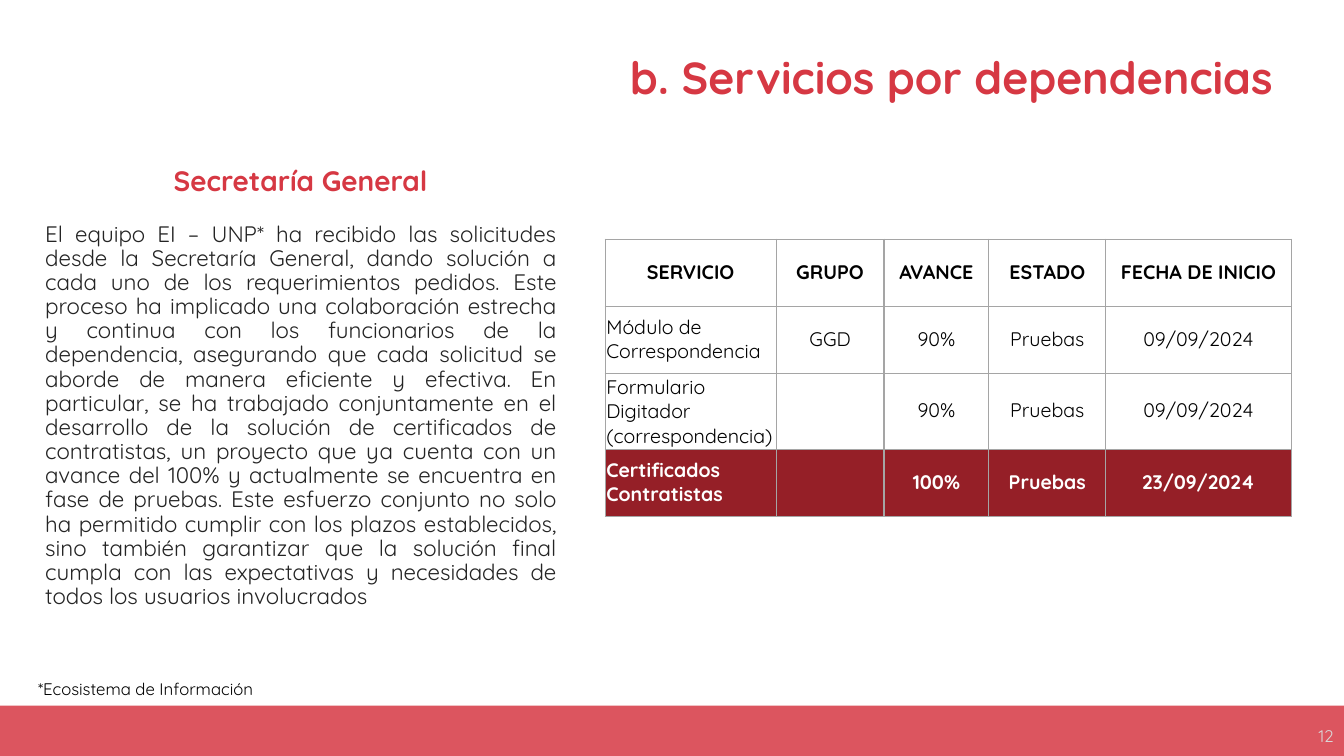
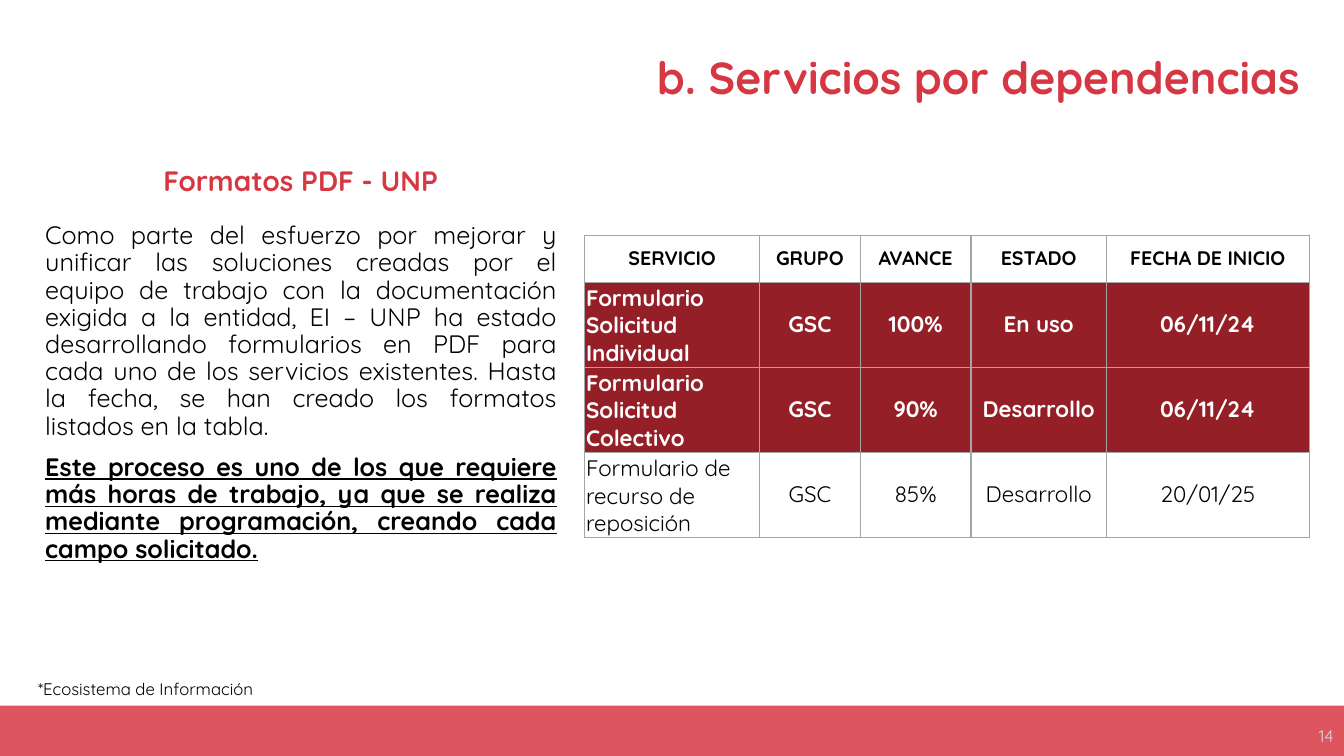
from lxml import etree
from pptx import Presentation
from pptx.dml.color import RGBColor
from pptx.enum.shapes import MSO_SHAPE
from pptx.enum.text import MSO_ANCHOR, PP_ALIGN
from pptx.oxml.ns import qn
from pptx.util import Cm, Pt

FONT = "Quicksand"
RED = "D63843"
DARK_RED = "951F27"
BLACK = "000000"
CHARCOAL = "242424"
WHITE = "FFFFFF"
PALE_GRAY = "D9D9D9"
BORDER_GRAY = "A5A5A5"

SLIDE_WIDTH = 33.87
SLIDE_HEIGHT = 19.05
BAND_TOP = 17.78
HEADINGS = ["SERVICIO", "GRUPO", "AVANCE", "ESTADO", "FECHA DE INICIO"]


def color(hex_value):
    return RGBColor.from_string(hex_value)


def style_font(font, size, hex_value, bold=False):
    font.name = FONT
    font.size = Pt(size)
    font.bold = bold
    font.color.rgb = color(hex_value)


def add_text(slide, box, paragraphs, size, hex_value, bold=False,
             align=PP_ALIGN.LEFT, anchor=MSO_ANCHOR.TOP, spacing=None):
    """Add a text box at box (left, top, width, height in cm); return its paragraphs."""
    frame = slide.shapes.add_textbox(*map(Cm, box)).text_frame
    frame.word_wrap = True
    frame.vertical_anchor = anchor
    frame.text = "\n".join(paragraphs)
    for paragraph in frame.paragraphs:
        paragraph.alignment = align
        paragraph.line_spacing = spacing
        style_font(paragraph.font, size, hex_value, bold)
    return frame.paragraphs


def add_band(slide):
    band = slide.shapes.add_shape(MSO_SHAPE.RECTANGLE, 0, Cm(BAND_TOP), Cm(SLIDE_WIDTH),
                                  Cm(SLIDE_HEIGHT - BAND_TOP))
    band.shadow.inherit = False
    band.line.fill.background()
    band.fill.solid()
    band.fill.fore_color.rgb = color(RED)
    fill_color = band.fill._xPr.find(".//" + qn("a:srgbClr"))
    etree.SubElement(fill_color, qn("a:alpha"), val="85000")


def add_frame(slide, subtitle, page, title_left):
    """Add the band, titles, footnote and page number."""
    add_band(slide)
    add_text(slide, (title_left, 0.95, 28.45, 1.8), ["b. Servicios por dependencias"], 32, RED,
             bold=True, align=PP_ALIGN.RIGHT, anchor=MSO_ANCHOR.BOTTOM, spacing=0.9)
    add_text(slide, (1.52, 3.71, 12.12, 1.8), [subtitle], 20, RED,
             bold=True, align=PP_ALIGN.CENTER, anchor=MSO_ANCHOR.MIDDLE, spacing=0.9)
    add_text(slide, (0.71, 16.99, 7.11, 0.77), ["*Ecosistema de Información"], 12, BLACK)
    add_text(slide, (26.24, 18.03, 7.62, 1.02), [page], 12, PALE_GRAY,
             align=PP_ALIGN.RIGHT, anchor=MSO_ANCHOR.MIDDLE)


def add_body(slide, paragraphs, size, hex_value):
    body = add_text(slide, (0.89, 5.49, 13.39, 10.54), paragraphs, size, hex_value,
                    align=PP_ALIGN.JUSTIFY, spacing=0.9)
    for paragraph in body[1:]:
        paragraph.space_before = Pt(10)
    return body


def add_borders(cell):
    properties = cell._tc.get_or_add_tcPr()
    for position, side in enumerate(("lnL", "lnR", "lnT", "lnB")):
        line = etree.Element(qn("a:" + side), w=str(Pt(1)))
        fill = etree.SubElement(line, qn("a:solidFill"))
        etree.SubElement(fill, qn("a:srgbClr"), val=BORDER_GRAY)
        properties.insert(position, line)


def fill_cell(cell, text, size, align, bold, highlighted):
    cell.margin_left = cell.margin_right = cell.margin_top = Cm(0.03)
    cell.margin_bottom = Cm(0.08)
    cell.vertical_anchor = MSO_ANCHOR.MIDDLE
    cell.fill.solid()
    cell.fill.fore_color.rgb = color(DARK_RED if highlighted else WHITE)
    add_borders(cell)
    cell.text = text
    paragraph = cell.text_frame.paragraphs[0]
    paragraph.alignment = align
    style_font(paragraph.font, size, WHITE if highlighted else BLACK, bold)


def add_services_table(slide, left, top, widths, heights, services, size, highlighted_rows):
    rows = [HEADINGS] + services
    graphic = slide.shapes.add_table(len(rows), len(widths), Cm(left), Cm(top),
                                     Cm(sum(widths)), Cm(sum(heights)))
    table = graphic.table
    table.first_row = table.horz_banding = False
    for column, width in zip(table.columns, widths):
        column.width = Cm(width)
    for row, height in zip(table.rows, heights):
        row.height = Cm(height)
    for r, row in enumerate(rows):
        is_header = r == 0
        highlighted = r in highlighted_rows
        for c, text in enumerate(row):
            align = PP_ALIGN.LEFT if c == 0 and not is_header else PP_ALIGN.CENTER
            fill_cell(table.cell(r, c), text, 14 if is_header else size, align,
                      is_header or highlighted, highlighted)


def build_secretaria(slide):
    add_frame(slide, "Secretaría General", "12", 3.89)
    add_body(slide, [
        "El equipo EI – UNP* ha recibido las solicitudes desde la Secretaría General, dando "
        "solución a cada uno de los requerimientos pedidos. Este proceso ha implicado una "
        "colaboración estrecha y continua con los funcionarios de la dependencia, asegurando "
        "que cada solicitud se aborde de manera eficiente y efectiva. En particular, se ha "
        "trabajado conjuntamente en el desarrollo de la solución de certificados de "
        "contratistas, un proyecto que ya cuenta con un avance del 100% y actualmente se "
        "encuentra en fase de pruebas. Este esfuerzo conjunto no solo ha permitido cumplir con "
        "los plazos establecidos, sino también garantizar que la solución final cumpla con las "
        "expectativas y necesidades de todos los usuarios involucrados",
    ], 16, CHARCOAL)
    services = [
        ["Módulo de Correspondencia", "GGD", "90%", "Pruebas", "09/09/2024"],
        ["Formulario Digitador (correspondencia)", "", "90%", "Pruebas", "09/09/2024"],
        ["Certificados Contratistas", "", "100%", "Pruebas", "23/09/2024"],
    ]
    add_services_table(slide, 15.25, 6.03, [4.31, 2.72, 2.64, 2.95, 4.67],
                       [1.69, 1.69, 1.92, 1.69], services, 14, {3})


def build_formatos(slide):
    add_frame(slide, "Formatos PDF - UNP", "14", 4.57)
    body = add_body(slide, [
        "Como parte del esfuerzo por mejorar y unificar las soluciones creadas por el equipo de "
        "trabajo con la documentación exigida a la entidad, EI – UNP ha estado desarrollando "
        "formularios en PDF para cada uno de los servicios existentes. Hasta la fecha, se han "
        "creado los formatos listados en la tabla.",
        "Este proceso es uno de los que requiere más horas de trabajo, ya que se realiza "
        "mediante programación, creando cada campo solicitado.",
    ], 18, BLACK)
    body[1].font.bold = body[1].font.underline = True
    services = [
        ["Formulario Solicitud Individual", "GSC", "100%", "En uso", "06/11/24"],
        ["Formulario Solicitud Colectivo", "GSC", "90%", "Desarrollo", "06/11/24"],
        ["Formulario de recurso de reposición", "GSC", "85%", "Desarrollo", "20/01/25"],
    ]
    add_services_table(slide, 14.74, 5.93, [4.4, 2.54, 2.79, 3.41, 5.12],
                       [1.19] + [2.12] * 3, services, 16, {1, 2})


def main():
    presentation = Presentation()
    presentation.slide_width = Cm(SLIDE_WIDTH)
    presentation.slide_height = Cm(SLIDE_HEIGHT)
    for build in (build_secretaria, build_formatos):
        build(presentation.slides.add_slide(presentation.slide_layouts[6]))
    presentation.save("out.pptx")


if __name__ == "__main__":
    main()
